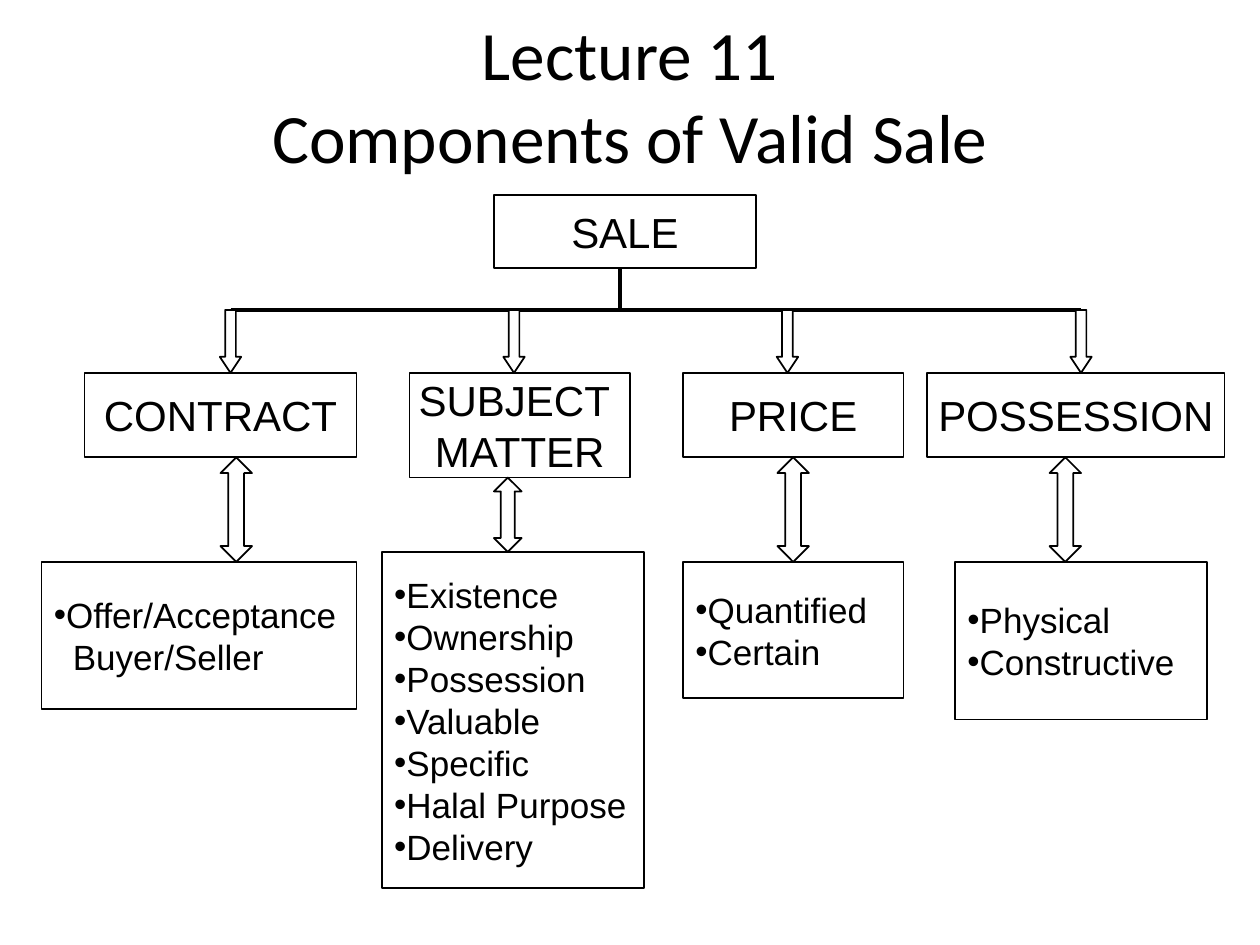
from lxml import etree
from pptx import Presentation
from pptx.dml.color import RGBColor
from pptx.enum.shapes import MSO_CONNECTOR, MSO_SHAPE
from pptx.enum.text import MSO_ANCHOR, MSO_AUTO_SIZE, PP_ALIGN
from pptx.oxml.ns import qn
from pptx.util import Inches, Pt

BLACK = RGBColor(0x00, 0x00, 0x00)
WHITE = RGBColor(0xFF, 0xFF, 0xFF)
RECT = MSO_SHAPE.RECTANGLE
DOWN, UP_DOWN = MSO_SHAPE.DOWN_ARROW, MSO_SHAPE.UP_DOWN_ARROW
STRAIGHT = MSO_CONNECTOR.STRAIGHT
MIDDLE = MSO_ANCHOR.MIDDLE
CENTER, LEFT = PP_ALIGN.CENTER, PP_ALIGN.LEFT
NO_FIT = MSO_AUTO_SIZE.NONE

TITLE_FONT = {"name": "Calibri", "size": Pt(39.6)}
HEAD_FONT = {"name": "Arial", "size": Pt(24)}
LIST_FONT = {"name": "Arial", "size": Pt(20)}

BAR_Y, HEAD_Y = 2.46, 2.96
DOWN_WIDTH = 0.17
SALE = (3.92, 1.55, 2.08, 0.58)
TRUNK_X = 4.92
CONTINUATION_INDENT = 0.15

BRANCHES = [
    {"head": ["CONTRACT"], "head_box": (0.67, 2.16, 0.67), "down_x": 1.83,
     "items": ["Offer/Acceptance"], "tail": "Buyer/Seller",
     "list_box": (0.33, 4.46, 2.5, 1.17), "link": (1.75, 0.25, 0.67)},
    {"head": ["SUBJECT ", "MATTER"], "head_box": (3.25, 1.75, 0.83), "down_x": 4.08,
     "items": ["Existence", "Ownership", "Possession", "Valuable", "Specific",
               "Halal Purpose", "Delivery"],
     "list_box": (3.03, 4.38, 2.08, 2.67), "link": (3.92, 0.22, 0.6)},
    {"head": ["PRICE"], "head_box": (5.42, 1.75, 0.67), "down_x": 6.25,
     "items": ["Quantified", "Certain"],
     "list_box": (5.42, 4.46, 1.75, 1.08), "link": (6.17, 0.25, 0.67)},
    {"head": ["POSSESSION"], "head_box": (7.36, 2.36, 0.67), "down_x": 8.58,
     "items": ["Physical", "Constructive"],
     "list_box": (7.58, 4.46, 2, 1.25), "link": (8.33, 0.25, 0.67)},
]


def set_font(font, values):
    """Apply a dict of format values and the text colour to a font."""
    for name, value in values.items():
        setattr(font, name, value)
    font.color.rgb = BLACK


def add_title(slide, text):
    """Place and format the title placeholder."""
    sp = slide.shapes.title
    sp.left, sp.top, sp.width, sp.height = map(Inches, (0.5, 0.12, 9, 1.25))
    tf = sp.text_frame
    tf.text = text
    tf.auto_size, tf.vertical_anchor = NO_FIT, MIDDLE
    p = tf.paragraphs[0]
    p.alignment = CENTER
    for r in p.runs:
        set_font(r.font, TITLE_FONT)


def add_outlined(slide, kind, box, adjustments=()):
    """Add a white preset shape with a thin black outline."""
    sp = slide.shapes.add_shape(kind, *map(Inches, box))
    for i, value in enumerate(adjustments):
        sp.adjustments[i] = value
    sp.shadow.inherit = False
    sp.fill.solid()
    sp.fill.fore_color.rgb = WHITE
    sp.line.color.rgb = BLACK
    sp.line.width = Pt(1)
    return sp


def add_box(slide, box, lines, font, alignment, wrap):
    """Add a rectangle with one paragraph per line and return the paragraphs."""
    tf = add_outlined(slide, RECT, box).text_frame
    tf.word_wrap, tf.vertical_anchor = wrap, MIDDLE
    for i, line in enumerate(lines):
        p = tf.paragraphs[0] if i == 0 else tf.add_paragraph()
        p.alignment = alignment
        r = p.add_run()
        r.text = line
        set_font(r.font, font)
    return tf.paragraphs


def add_heading(slide, box, lines):
    """Add a box with centred heading text."""
    add_box(slide, box, lines, HEAD_FONT, CENTER, False)


def add_list(slide, box, items, tail=None):
    """Add a box of bulleted items, with an optional unbulleted last line."""
    lines = items + [tail] if tail else items
    for i, p in enumerate(add_box(slide, box, lines, LIST_FONT, LEFT, True)):
        pPr = p._p.get_or_add_pPr()
        if i < len(items):
            etree.SubElement(pPr, qn("a:buFont"), typeface=LIST_FONT["name"])
            etree.SubElement(pPr, qn("a:buChar"), char="•")
        else:
            pPr.set("marL", str(Inches(CONTINUATION_INDENT)))


def add_line(slide, x1, y1, x2, y2):
    """Add a thick black straight line."""
    cx = slide.shapes.add_connector(STRAIGHT, *map(Inches, (x1, y1, x2, y2)))
    cx.line.color.rgb = BLACK
    cx.line.width = Pt(2.5)
    etree.SubElement(cx._element.spPr, qn("a:effectLst"))


def add_branch(slide, branch):
    """Add a heading, its list and the arrows that lead to them."""
    left, width, height = branch["head_box"]
    add_heading(slide, (left, HEAD_Y, width, height), branch["head"])
    add_list(slide, branch["list_box"], branch["items"], branch.get("tail"))
    down_left = branch["down_x"] - DOWN_WIDTH / 2
    down_box = (down_left, BAR_Y, DOWN_WIDTH, HEAD_Y - BAR_Y)
    add_outlined(slide, DOWN, down_box, (0.5, 0.75))
    link_x, link_width, head = branch["link"]
    link_y = HEAD_Y + height
    link_box = (link_x, link_y, link_width, branch["list_box"][1] - link_y)
    add_outlined(slide, UP_DOWN, link_box, (head, 0.5))


def main():
    """Build the slide and save it."""
    prs = Presentation()
    prs.slide_width, prs.slide_height = Inches(10), Inches(7.5)
    slide = prs.slides.add_slide(prs.slide_layouts[5])
    add_title(slide, "Lecture 11\vComponents of Valid Sale")
    add_heading(slide, SALE, ["SALE"])
    add_line(slide, TRUNK_X, SALE[1] + SALE[3], TRUNK_X, BAR_Y)
    add_line(slide, BRANCHES[0]["down_x"], BAR_Y, BRANCHES[-1]["down_x"], BAR_Y)
    for branch in BRANCHES:
        add_branch(slide, branch)
    prs.save("out.pptx")


if __name__ == "__main__":
    main()
